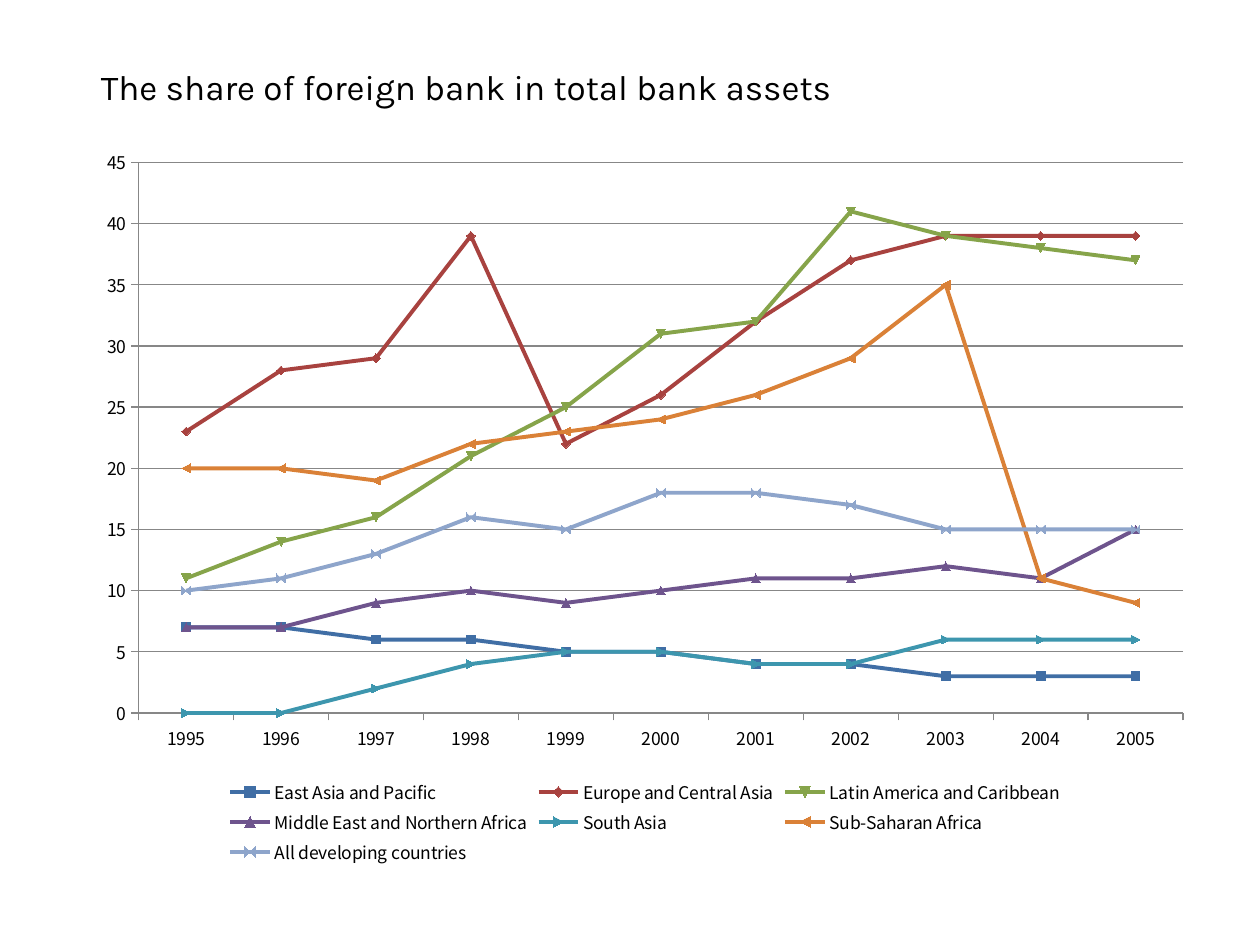
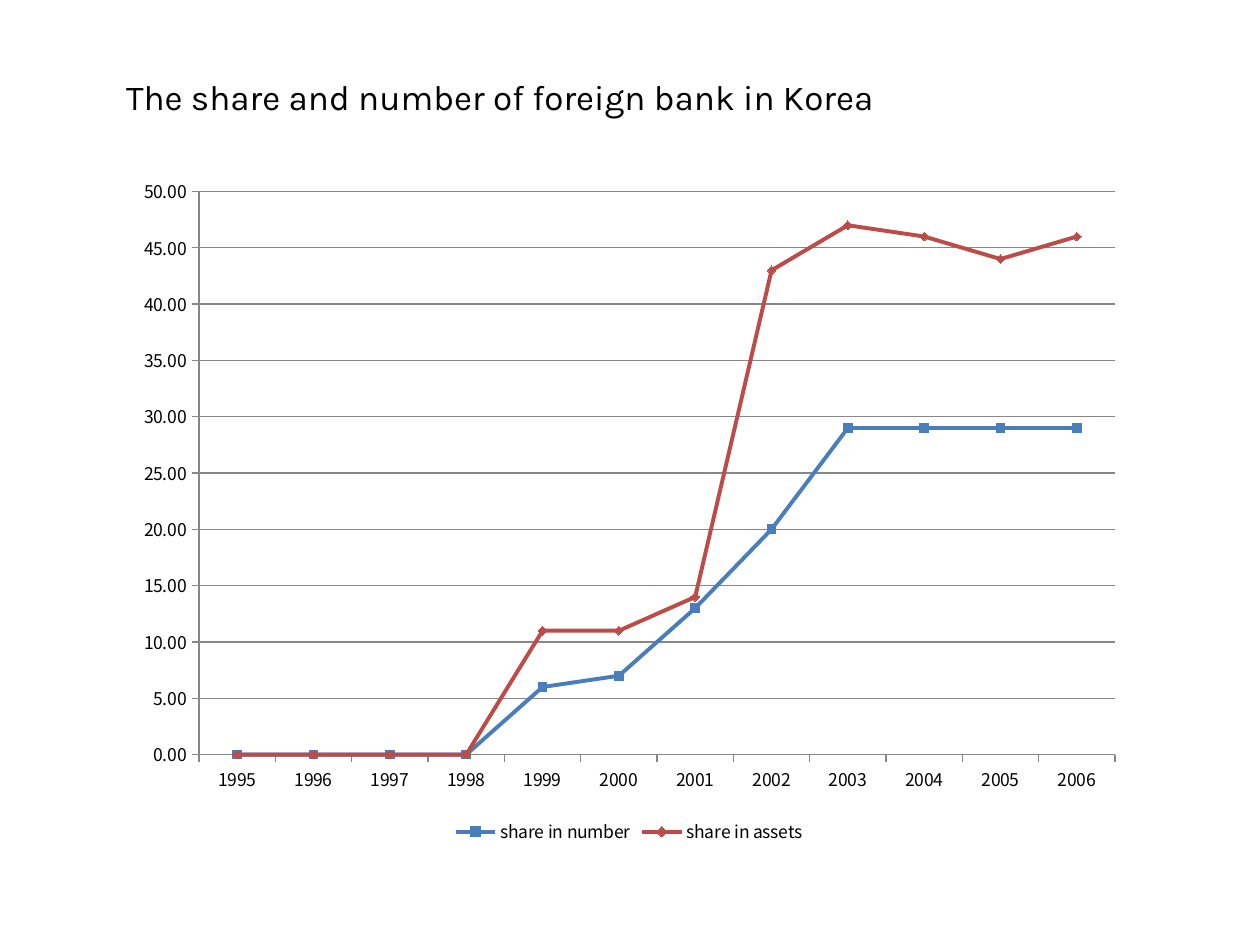
from lxml import etree
from pptx import Presentation
from pptx.chart.data import CategoryChartData
from pptx.dml.color import RGBColor
from pptx.enum.chart import XL_CHART_TYPE, XL_LEGEND_POSITION, XL_TICK_MARK
from pptx.enum.text import MSO_ANCHOR, PP_ALIGN
from pptx.oxml.ns import qn
from pptx.util import Inches, Pt

COLORS = {
    "text": "000000",
    "grid": "878787",
    "blue": "406EA5",
    "red": "A8423F",
    "green": "86A44A",
    "purple": "6E548D",
    "teal": "3D96AE",
    "orange": "DA8137",
    "pale blue": "8EA5CB",
    "bright blue": "4A7EBB",
    "bright red": "BE4B48",
}
TITLE_FONT = "Karla"
CHART_FONT = "Noto Sans CJK KR"

REGION_SHARES = [
    ("East Asia and Pacific", "blue", [7, 7, 6, 6, 5, 5, 4, 4, 3, 3, 3]),
    ("Europe and Central Asia", "red", [23, 28, 29, 39, 22, 26, 32, 37, 39, 39, 39]),
    ("Latin America and Caribbean", "green", [11, 14, 16, 21, 25, 31, 32, 41, 39, 38, 37]),
    ("Middle East and Northern Africa", "purple", [7, 7, 9, 10, 9, 10, 11, 11, 12, 11, 15]),
    ("South Asia", "teal", [0, 0, 2, 4, 5, 5, 4, 4, 6, 6, 6]),
    ("Sub-Saharan Africa", "orange", [20, 20, 19, 22, 23, 24, 26, 29, 35, 11, 9]),
    ("All developing countries", "pale blue", [10, 11, 13, 16, 15, 18, 18, 17, 15, 15, 15]),
]
KOREA_SHARES = [
    ("share in number", "bright blue", [0, 0, 0, 0, 6, 7, 13, 20, 29, 29, 29, 29]),
    ("share in assets", "bright red", [0, 0, 0, 0, 11, 11, 14, 43, 47, 46, 44, 46]),
]


def color(name):
    """Return the named colour."""
    return RGBColor.from_string(COLORS[name])


def format_font(font, *, name, size, color_name="text"):
    """Set the typeface, size and colour of a font."""
    font.name = name
    font.size = Pt(size)
    font.bold = False
    font.color.rgb = color(color_name)


def format_line(line, color_name, width):
    """Set the colour and width of a line."""
    line.color.rgb = color(color_name)
    line.width = Pt(width)


def write_text(text_frame, text, *, name, size, indent, align=PP_ALIGN.LEFT):
    """Write one formatted paragraph into a text frame."""
    text_frame.word_wrap = True
    text_frame.vertical_anchor = MSO_ANCHOR.MIDDLE
    text_frame.margin_left = Inches(indent)
    paragraph = text_frame.paragraphs[0]
    paragraph.alignment = align
    run = paragraph.add_run()
    run.text = text
    format_font(run.font, name=name, size=size)


def add_title(slide, text, box, indent):
    """Place and format the title placeholder."""
    title = slide.shapes.title
    title.left, title.top, title.width, title.height = map(Inches, box)
    write_text(title.text_frame, text, name=TITLE_FONT, size=20, indent=indent)


def place_plot(chart, box, plot):
    """Fix the inner plot area, given in inches from the corner of the chart box."""
    plot_area = chart.plots[0]._element.getparent()
    for layout in plot_area.findall(qn("c:layout")):
        plot_area.remove(layout)
    layout = etree.Element(qn("c:layout"))
    manual = etree.SubElement(layout, qn("c:manualLayout"))
    settings = [("layoutTarget", "inner"), ("xMode", "edge"), ("yMode", "edge")]
    settings += [(key, f"{length / box[2 + index % 2]:.4f}")
                 for index, (key, length) in enumerate(zip("xywh", plot))]
    for key, value in settings:
        etree.SubElement(manual, qn(f"c:{key}")).set("val", value)
    plot_area.insert(0, layout)


def format_axes(chart, maximum, number_format):
    """Style both axes and the horizontal gridlines."""
    for axis in (chart.category_axis, chart.value_axis):
        axis.major_tick_mark = XL_TICK_MARK.OUTSIDE
        axis.minor_tick_mark = XL_TICK_MARK.NONE
        format_line(axis.format.line, "grid", 0.75)
    value_axis = chart.value_axis
    value_axis.minimum_scale = 0
    value_axis.maximum_scale = maximum
    value_axis.major_unit = 5
    value_axis.has_major_gridlines = True
    format_line(value_axis.major_gridlines.format.line, "grid", 0.75)
    value_axis.tick_labels.number_format = number_format
    value_axis.tick_labels.number_format_is_linked = False


def add_line_chart(slide, shares, box, plot, maximum, number_format):
    """Add a yearly line chart with markers and a legend below it."""
    data = CategoryChartData()
    data.categories = [str(1995 + index) for index in range(len(shares[0][2]))]
    for name, _, values in shares:
        data.add_series(name, values)
    chart = slide.shapes.add_chart(
        XL_CHART_TYPE.LINE_MARKERS, *map(Inches, box), data).chart
    format_font(chart.font, name=CHART_FONT, size=10)
    chart.has_title = False
    chart.has_legend = True
    chart.legend.position = XL_LEGEND_POSITION.BOTTOM
    chart.legend.include_in_layout = False
    chart.plots[0].vary_by_categories = False
    format_axes(chart, maximum, number_format)
    place_plot(chart, box, plot)
    for series, (_, color_name, _) in zip(chart.plots[0].series, shares):
        series.smooth = False
        format_line(series.format.line, color_name, 2.25)
        series.marker.size = 5
        series.marker.format.fill.solid()
        series.marker.format.fill.fore_color.rgb = color(color_name)
        format_line(series.marker.format.line, color_name, 0.75)


def add_chart_slide(presentation, *, title, title_height, indent, **chart_options):
    """Add a slide with a title above a line chart."""
    slide = presentation.slides.add_slide(presentation.slide_layouts[5])
    add_title(slide, title, (0.5, 0.3, 9, title_height), indent)
    add_line_chart(slide, **chart_options)


def main():
    """Build and save the presentation."""
    presentation = Presentation()
    presentation.slide_width = Inches(10)
    presentation.slide_height = Inches(7.5)
    add_chart_slide(
        presentation,
        title="The share of foreign bank in total bank assets",
        title_height=0.77, indent=0.3,
        shares=REGION_SHARES, box=(0.67, 1.07, 8.9, 5.83),
        plot=(0.43, 0.22, 8.29, 4.37), maximum=45, number_format="General")
    add_chart_slide(
        presentation,
        title="The share and number of foreign bank in Korea",
        title_height=0.93, indent=0.5,
        shares=KOREA_SHARES, box=(0.98, 1.31, 8.03, 5.43),
        plot=(0.6, 0.21, 7.27, 4.47), maximum=50, number_format="0.00")
    presentation.save("out.pptx")


if __name__ == "__main__":
    main()
